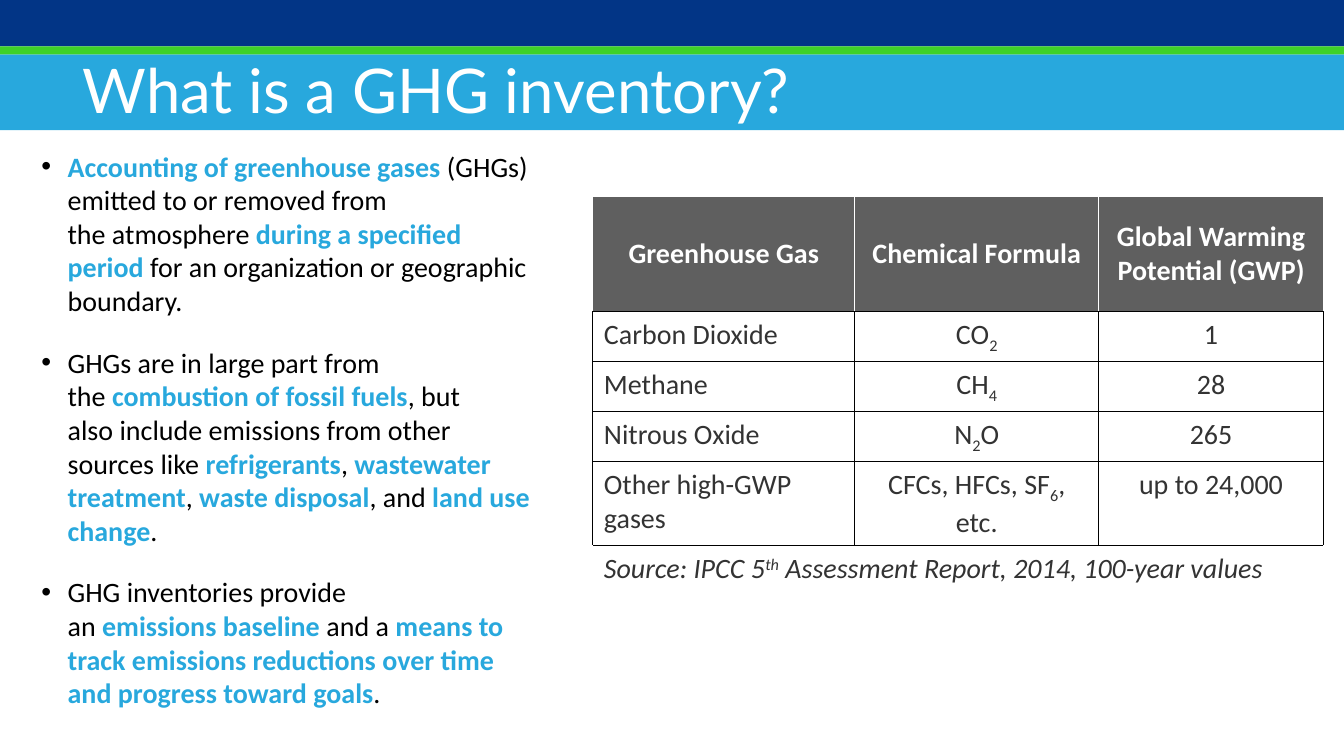
from dataclasses import dataclass
from typing import Any

from lxml.etree import SubElement
from pptx import Presentation
from pptx.dml.color import RGBColor
from pptx.enum.shapes import MSO_SHAPE
from pptx.enum.text import MSO_ANCHOR as Anchor, MSO_AUTO_SIZE as AutoSize, PP_ALIGN as Align
from pptx.oxml.ns import qn
from pptx.util import Cm, Pt


@dataclass(frozen=True)
class Theme:
    navy: str = "023586"
    green: str = "3ED128"
    blue: str = "28A8DD"
    header: str = "5F5F5F"
    cell_text: str = "333333"
    black: str = "000000"
    white: str = "FFFFFF"
    title_font: str = "Lato"
    body_font: str = "Calibri"
    title_size: int = 44
    body_size: int = 20


@dataclass(frozen=True)
class Band:
    top: float
    height: float
    color: str


@dataclass(frozen=True)
class Style:
    color: str
    bold: bool = False
    italic: bool = False
    font: str = Theme.body_font
    size: int = Theme.body_size
    baseline: int = 0


@dataclass(frozen=True)
class RowLook:
    fill: str
    style: Style
    borders: dict[str, str]
    anchor: Any = Anchor.TOP


T = Theme()
WIDTH, HEIGHT = 33.87, 19.05
NBSP = chr(160)

BANDS = [
    Band(1.37, 1.91, T.blue),
    Band(0, 1.17, T.navy),
    Band(1.17, 0.2, T.green),
]

# "*" encloses highlighted words, "~" stands for a non-breaking space
BULLETS = [
    "*Accounting of greenhouse gases~*(GHGs) emitted to or removed from the~atmosphere~"
    "*during a specified period~*for~an organization or geographic boundary.",
    "GHGs are in large part from the~*combustion of fossil fuels*, but also~include "
    "emissions from other sources like~*refrigerants*,~*wastewater treatment*,~"
    "*waste disposal*, and~*land use change*.",
    "GHG inventories provide an~*emissions~baseline~*and a~*means to track "
    "emissions~reductions over time and progress~toward goals*.",
]

# "_" encloses subscripts, "^" encloses superscripts
GASES = [
    ("Greenhouse Gas", "Chemical Formula", "Global Warming Potential (GWP)"),
    ("Carbon Dioxide", "CO_2_", "1"),
    ("Methane", "CH_4_", "28"),
    ("Nitrous Oxide", "N_2_O", "265"),
    ("Other high-GWP gases", "CFCs, HFCs, SF_6_, etc.", "up to 24,000"),
    ("Source: IPCC 5^th^ Assessment Report, 2014, 100-year values", "", ""),
]
COLUMN_WIDTHS = [6.6, 6.15, 5.66]
ROW_HEIGHTS = [2.9, 1.17, 1.17, 1.17, 2.03, 2.03]

HEADER_LOOK = RowLook(T.header, Style(T.white, bold=True),
                      dict(L=T.white, R=T.white, T=T.white, B=T.black), Anchor.MIDDLE)
GAS_LOOK = RowLook(T.white, Style(T.cell_text), dict.fromkeys("LRTB", T.black))
SOURCE_LOOK = RowLook(T.white, Style(T.cell_text, italic=True),
                      dict(L=T.white, R=T.white, T=T.black, B=T.white))
LOOKS = [HEADER_LOOK, *[GAS_LOOK] * 4, SOURCE_LOOK]


def rgb(color: str) -> RGBColor:
    return RGBColor.from_string(color)


def set_all(obj: Any, values: dict[str, Any]) -> None:
    for name, value in values.items():
        setattr(obj, name, value)


def place(shape: Any, left: float, top: float, width: float, height: float) -> None:
    set_all(shape, dict(left=Cm(left), top=Cm(top), width=Cm(width), height=Cm(height)))


def add_run(p: Any, text: str, style: Style) -> None:
    r = p.add_run()
    r.text = text.replace("~", NBSP)
    set_all(r.font, dict(name=style.font, size=Pt(style.size),
                         bold=style.bold, italic=style.italic))
    r.font.color.rgb = rgb(style.color)
    if style.baseline:
        r.font._element.set("baseline", str(style.baseline * 1000))


def add_marked(p: Any, text: str, mark: str, plain: Style, marked: Style) -> None:
    """Write text, giving the pieces enclosed in the mark their own style."""
    for i, piece in enumerate(text.split(mark)):
        if piece:
            add_run(p, piece, marked if i % 2 else plain)


def add_band(s: Any, band: Band) -> None:
    shape = s.shapes.add_shape(MSO_SHAPE.RECTANGLE, 0, Cm(band.top), Cm(WIDTH), Cm(band.height))
    shape.shadow.inherit = False
    shape.fill.solid()
    shape.fill.fore_color.rgb = rgb(band.color)
    shape.line.fill.background()


def set_bullet(p: Any) -> None:
    set_all(p, dict(space_before=Pt(10), space_after=Pt(10), alignment=Align.LEFT))
    pPr = p._p.get_or_add_pPr()
    pPr.set("marL", str(Cm(0.66)))
    pPr.set("indent", str(-Cm(0.66)))
    SubElement(SubElement(pPr, qn("a:buClr")), qn("a:srgbClr"), val=T.black)
    SubElement(pPr, qn("a:buFont"), typeface="Arial")
    SubElement(pPr, qn("a:buChar"), char="•")


def fill_body(body: Any) -> None:
    place(body, 0.79, 3.63, 13.16, 16.05)
    tf = body.text_frame
    set_all(tf, dict(word_wrap=True, auto_size=AutoSize.NONE, vertical_anchor=Anchor.TOP))
    for i, text in enumerate(BULLETS):
        p = tf.add_paragraph() if i else tf.paragraphs[0]
        set_bullet(p)
        add_marked(p, text, "*", Style(T.black), Style(T.blue, bold=True))


def fill_title(title: Any) -> None:
    place(title, 1.83, 1.17, 30.58, 2.13)
    tf = title.text_frame
    set_all(tf, dict(word_wrap=True, auto_size=AutoSize.NONE, vertical_anchor=Anchor.TOP))
    p = tf.paragraphs[0]
    p.alignment = Align.LEFT
    add_run(p, "What is a GHG inventory?", Style(T.white, font=T.title_font, size=T.title_size))


def format_cell(cell: Any, look: RowLook) -> None:
    set_all(cell, dict(margin_left=Cm(0.28), margin_right=Cm(0.28), margin_top=Cm(0.15),
                       margin_bottom=Cm(0.15), vertical_anchor=look.anchor))
    tcPr = cell._tc.get_or_add_tcPr()
    for side, color in look.borders.items():
        line = SubElement(tcPr, qn(f"a:ln{side}"), w=str(Pt(1)))
        SubElement(SubElement(line, qn("a:solidFill")), qn("a:srgbClr"), val=color)
    cell.fill.solid()
    cell.fill.fore_color.rgb = rgb(look.fill)


def add_gas_table(s: Any) -> None:
    table = s.shapes.add_table(len(GASES), len(COLUMN_WIDTHS), Cm(14.94), Cm(4.95),
                               Cm(sum(COLUMN_WIDTHS)), Cm(sum(ROW_HEIGHTS))).table
    set_all(table, dict(first_row=False, horz_banding=False))
    for column, width in zip(table.columns, COLUMN_WIDTHS):
        column.width = Cm(width)
    for i, (texts, height, look) in enumerate(zip(GASES, ROW_HEIGHTS, LOOKS)):
        table.rows[i].height = Cm(height)
        for j, text in enumerate(texts):
            cell = table.cell(i, j)
            format_cell(cell, look)
            p = cell.text_frame.paragraphs[0]
            p.alignment = Align.CENTER if j or look is HEADER_LOOK else Align.LEFT
            mark, shift = ("^", 30) if look is SOURCE_LOOK else ("_", -25)
            shifted = Style(look.style.color, italic=look.style.italic, baseline=shift)
            add_marked(p, text, mark, look.style, shifted)
    last = len(GASES) - 1
    table.cell(last, 0).merge(table.cell(last, len(COLUMN_WIDTHS) - 1))


def main() -> None:
    prs = Presentation()
    set_all(prs, dict(slide_width=Cm(WIDTH), slide_height=Cm(HEIGHT)))
    s = prs.slides.add_slide(prs.slide_layouts[1])
    fill_body(s.placeholders[1])
    add_gas_table(s)
    for band in BANDS:
        add_band(s, band)
    title = s.shapes.title
    fill_title(title)
    s.shapes.element.append(title.element)  # the title lies on top of the bands
    prs.save("out.pptx")


if __name__ == "__main__":
    main()
